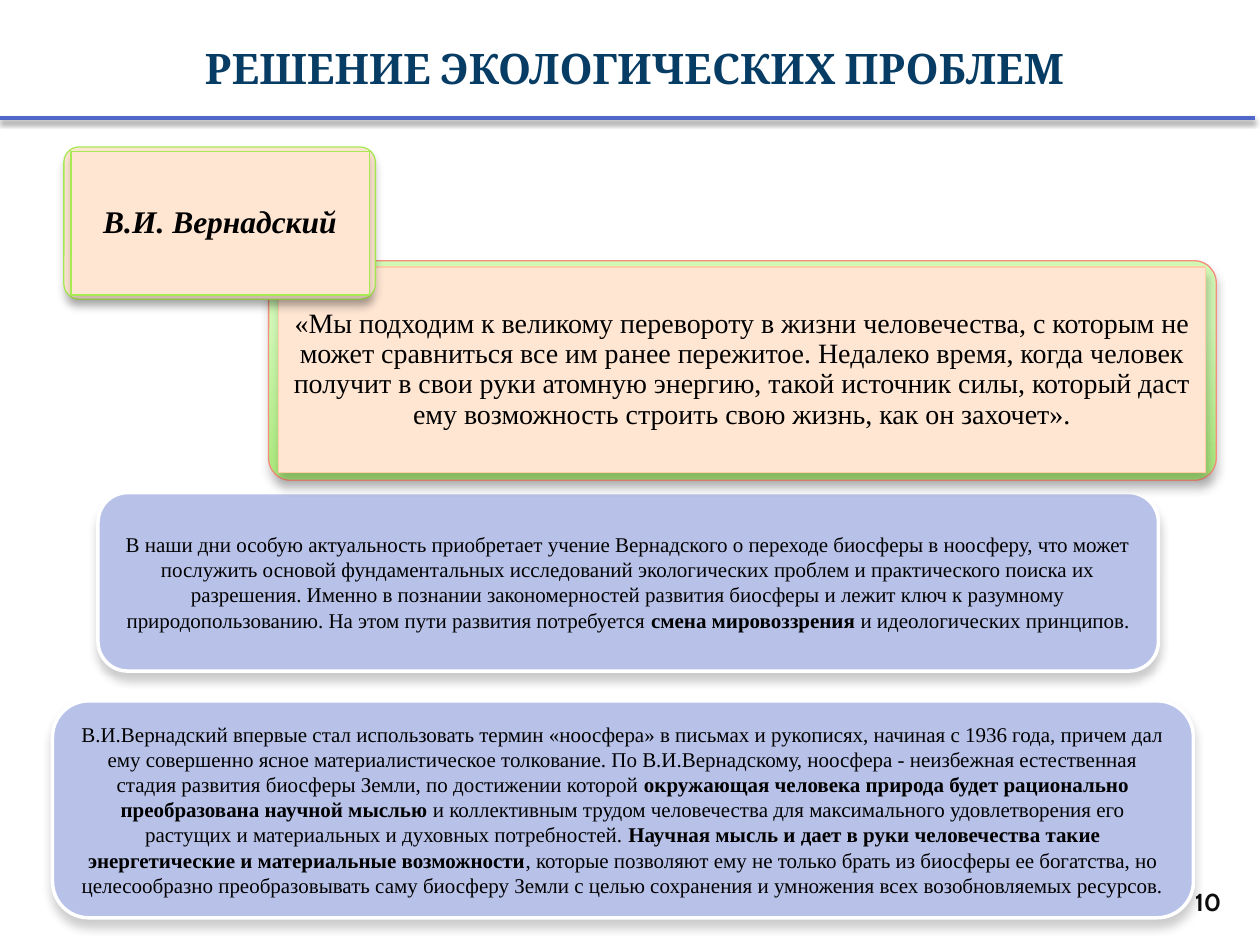
from pptx import Presentation
from pptx.dml.color import RGBColor as RGB
from pptx.enum.shapes import MSO_CONNECTOR as CONN, MSO_SHAPE as SHAPE
from pptx.enum.text import MSO_ANCHOR as ANCHOR, PP_ALIGN as ALIGN
from pptx.oxml import parse_xml
from pptx.oxml.ns import nsdecls
from pptx.util import Pt

COLORS = {
    "title": "073C65", "text": "000000", "number": "0D0D0D", "rule": "4E67C8",
    "card": "B8C2E9", "white": "FFFFFF", "peach": "FFE6D3", "peach_edge": "FFCCA6",
    "coral": "F78D7C", "lime": "A7EA52", "green_light": "D1F8B5", "green": "AAE87B",
}
SERIF = "Times New Roman"


def color(name):
    return RGB.from_string(COLORS[name])


def write(sp, *texts, size=12, font=SERIF, fill="text", bold=False, italic=False,
          align=ALIGN.CENTER, anchor=ANCHOR.MIDDLE, spacing=None, inset=None):
    """Fill one paragraph; every second text switches the bold setting."""
    tf = sp.text_frame
    tf.word_wrap = True
    tf.vertical_anchor = anchor
    if inset is not None:
        tf.margin_left = tf.margin_right = tf.margin_top = tf.margin_bottom = Pt(inset)
    p = tf.paragraphs[0]
    p.alignment = align
    if spacing:
        p.line_spacing = spacing
    for i, text in enumerate(texts):
        r = p.add_run()
        r.text = text
        r.font.name, r.font.size = font, Pt(size)
        r.font.bold, r.font.italic = bold != bool(i % 2), italic
        r.font.color.rgb = color(fill)


def add_shadow(sp, opacity=20, blur=5, distance=4):
    sp._element.spPr.append(parse_xml(
        f'<a:effectLst {nsdecls("a")}><a:outerShdw blurRad="{Pt(blur)}" '
        f'dist="{Pt(distance)}" dir="5400000" rotWithShape="0"><a:srgbClr val="000000">'
        f'<a:alpha val="{opacity * 1000}"/></a:srgbClr></a:outerShdw></a:effectLst>'))


class Deck:
    def __init__(self, width, height):
        self.prs = Presentation()
        self.prs.slide_width, self.prs.slide_height = Pt(width), Pt(height)
        self.s = self.prs.slides.add_slide(self.prs.slide_layouts[6])

    def text(self, box, text, **style):
        write(self.s.shapes.add_textbox(*map(Pt, box)), text, **style)

    def box(self, box, fill, edge, width=0.75, kind=SHAPE.ROUNDED_RECTANGLE,
            radius=None, parent=None):
        sp = (parent or self.s).shapes.add_shape(kind, *map(Pt, box))
        if radius is not None:
            sp.adjustments[0] = radius
        if isinstance(fill, str):
            sp.fill.solid()
            sp.fill.fore_color.rgb = color(fill)
        else:
            sp.fill.gradient()
            sp.fill.gradient_angle = 270
            for stop, (position, name) in zip(sp.fill.gradient_stops, fill):
                stop.position, stop.color.rgb = position, color(name)
        sp.line.color.rgb = color(edge)
        sp.line.width = Pt(width)
        add_shadow(sp)
        return sp

    def card(self, box, *texts):
        write(self.box(box, "card", "white", width=2), *texts)

    def framed(self, frame, frame_fill, frame_edge, panel, panel_edge, text, **style):
        group = self.s.shapes.add_group_shape()
        self.box(frame, frame_fill, frame_edge, radius=0.1, parent=group)
        sp = self.box(panel, "peach", panel_edge, kind=SHAPE.RECTANGLE, parent=group)
        write(sp, text, spacing=0.9, **style)

    def rule(self, y, length):
        line = self.s.shapes.add_connector(CONN.STRAIGHT, 0, Pt(y), Pt(length), Pt(y))
        line.line.color.rgb = color("rule")
        line.line.width = Pt(2)
        add_shadow(line, opacity=45, blur=3.1, distance=1.8)


def main():
    deck = Deck(720, 540)

    # Title
    deck.text((25, 21, 675, 36), "РЕШЕНИЕ ЭКОЛОГИЧЕСКИХ ПРОБЛЕМ", size=24,
              font="Cambria", fill="title", bold=True, anchor=ANCHOR.TOP)

    # Commentary cards
    deck.card((56, 281.5, 606, 102),
              "В наши дни особую актуальность приобретает учение Вернадского о переходе "
              "биосферы в ноосферу, что может послужить основой фундаментальных исследований "
              "экологических проблем и практического поиска их разрешения. Именно в познании "
              "закономерностей развития биосферы и лежит ключ к разумному природопользованию. "
              "На этом пути развития потребуется ",
              "смена мировоззрения ",
              "и идеологических принципов.")
    deck.card((30, 400.5, 652, 124),
              "В.И.Вернадский впервые стал использовать термин «ноосфера» в письмах и "
              "рукописях, начиная с 1936 года, причем дал ему совершенно ясное "
              "материалистическое толкование. По В.И.Вернадскому, ноосфера - неизбежная "
              "естественная стадия развития биосферы Земли, по достижении которой ",
              "окружающая человека природа будет рационально преобразована научной мыслью",
              " и коллективным трудом человечества для максимального удовлетворения его "
              "растущих и материальных и духовных потребностей. ",
              "Научная мысль и дает в руки человечества такие энергетические и материальные "
              "возможности",
              ", которые позволяют ему не только брать из биосферы ее богатства, но "
              "целесообразно преобразовывать саму биосферу Земли с целью сохранения и "
              "умножения всех возобновляемых ресурсов.")

    # Quotation and its author
    deck.framed((153.5, 149, 541.5, 125.5), [(0.28, "green_light"), (1, "green")], "coral",
                (159, 152.5, 530, 117.5), "peach_edge",
                "«Мы подходим к великому перевороту в жизни человечества, с которым не может "
                "сравниться все им ранее пережитое. Недалеко время, когда человек получит в "
                "свои руки атомную энергию, такой источник силы, который даст ему возможность "
                "строить свою жизнь, как он захочет».", size=16, inset=4.5)
    deck.framed((36.5, 84, 178, 87), "peach", "lime", (40.5, 86.5, 170.5, 82), "lime",
                "В.И. Вернадский", size=18, bold=True, italic=True, inset=5)

    # Rule under the title and slide number
    deck.rule(67.5, 717)
    deck.text((669.5, 500.5, 35.5, 29.5), "10", size=14, font="Cabin", fill="number",
              bold=True, align=ALIGN.RIGHT)

    deck.prs.save("out.pptx")


if __name__ == "__main__":
    main()
